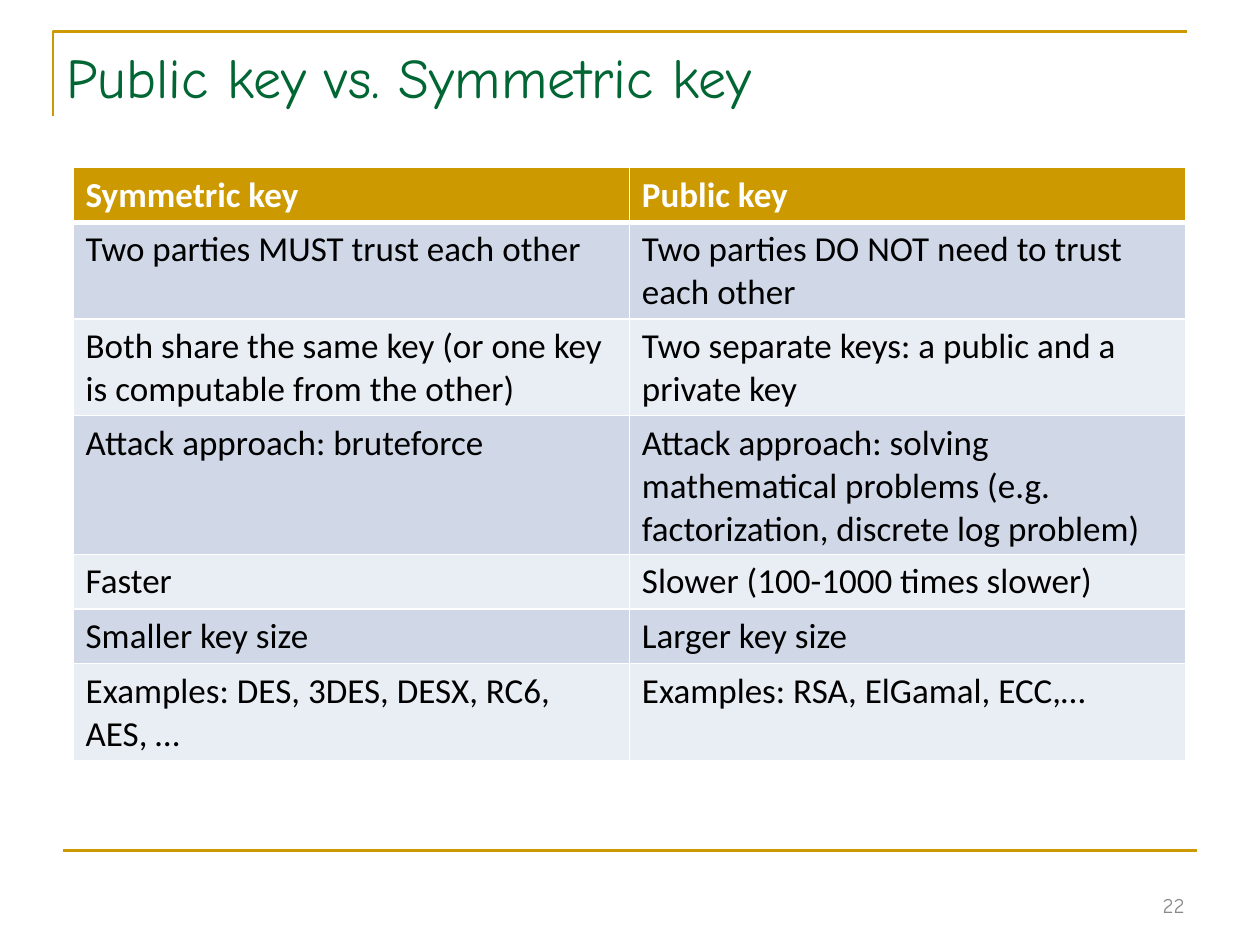
from lxml.etree import SubElement
from pptx import Presentation
from pptx.dml.color import RGBColor
from pptx.enum.text import MSO_ANCHOR, PP_ALIGN
from pptx.oxml.ns import qn
from pptx.util import Inches, Pt

GOLD = RGBColor(0xCC, 0x99, 0x00)
GREEN = RGBColor(0x00, 0x66, 0x33)
GREY = RGBColor(0x89, 0x89, 0x89)
WHITE = RGBColor(0xFF, 0xFF, 0xFF)
BLACK = RGBColor(0x00, 0x00, 0x00)
BANDS = (RGBColor(0xE9, 0xED, 0xF4), RGBColor(0xD0, 0xD8, 0xE8))

ROWS = (
    ("Symmetric key", "Public key"),
    ("Two parties MUST trust each other",
     "Two parties DO NOT need to trust each other"),
    ("Both share the same key (or one key is computable from the other)",
     "Two separate keys: a public and a private key"),
    ("Attack approach: bruteforce",
     "Attack approach: solving mathematical problems "
     "(e.g. factorization, discrete log problem)"),
    ("Faster", "Slower (100-1000 times slower)"),
    ("Smaller key size", "Larger key size"),
    ("Examples: DES, 3DES, DESX, RC6, AES, …", "Examples: RSA, ElGamal, ECC,…"),
)


def write(tf, text, size, color, font="Comic Neue", bold=False,
          align=PP_ALIGN.LEFT):
    """Put one formatted run of text into a text frame."""
    tf.word_wrap = True
    p = tf.paragraphs[0]
    p.alignment = align
    r = p.add_run()
    r.text = text
    r.font.size = Pt(size)
    r.font.name = font
    r.font.bold = bold
    r.font.color.rgb = color


def add_text(s, box, text, anchor=MSO_ANCHOR.TOP, **fmt):
    """Add a text box at the given left, top, width and height."""
    tf = s.shapes.add_textbox(*map(Inches, box)).text_frame
    tf.vertical_anchor = anchor
    write(tf, text, **fmt)


def add_corner(s, left, top, right, bottom):
    """Draw the open corner that frames the title."""
    fb = s.shapes.build_freeform(Inches(left), Inches(bottom))
    fb.add_line_segments([(Inches(left), Inches(top)),
                          (Inches(right), Inches(top))], close=False)
    sp = fb.convert_to_shape()
    sp.shadow.inherit = False
    sp.fill.background()
    sp.line.color.rgb = GOLD
    sp.line.width = Pt(1.5)


def add_rule(s, left, right, y):
    """Draw a horizontal rule."""
    line = s.shapes.add_connector(1, *map(Inches, (left, y, right, y)))
    line.line.color.rgb = GOLD
    line.line.width = Pt(1.5)
    SubElement(line._element.spPr, qn("a:effectLst"))


def set_borders(cell, widths):
    """Give a cell white borders, with widths in points keyed by side."""
    tc_pr = cell._tc.get_or_add_tcPr()
    for i, (side, width) in enumerate(widths.items()):
        ln = tc_pr.makeelement(qn(f"a:ln{side}"), {"w": str(Pt(width))})
        fill = SubElement(ln, qn("a:solidFill"))
        SubElement(fill, qn("a:srgbClr"), val=str(WHITE))
        tc_pr.insert(i, ln)


def add_comparison(s, left, top, width, row_height):
    """Add the banded table with a bold gold header."""
    n_rows, n_cols = len(ROWS), len(ROWS[0])
    table = s.shapes.add_table(
        n_rows, n_cols, Inches(left), Inches(top), Inches(width),
        Inches(row_height * n_rows)).table
    for i, texts in enumerate(ROWS):
        header = i == 0
        for j, text in enumerate(texts):
            cell = table.cell(i, j)
            cell.fill.solid()
            cell.fill.fore_color.rgb = GOLD if header else BANDS[i % 2]
            set_borders(cell, {"L": 1, "R": 1, "T": 3 if i == 1 else 1,
                               "B": 3 if header else 1})
            write(cell.text_frame, text, 20, WHITE if header else BLACK,
                  font="Calibri", bold=header)


def main():
    """Build the slide and save it."""
    prs = Presentation()
    prs.slide_width, prs.slide_height = Inches(10), Inches(7.5)
    s = prs.slides.add_slide(prs.slide_layouts[6])
    add_corner(s, 0.42, 0.25, 9.42, 0.92)
    add_rule(s, 0.5, 9.5, 6.75)
    add_text(s, (0.43, 0.29, 8.5, 0.75), "Public key vs. Symmetric key",
             size=32, color=GREEN)
    add_comparison(s, 0.58, 1.33, 8.83, 0.41)
    add_text(s, (7.17, 6.83, 2.33, 0.5), "22", anchor=MSO_ANCHOR.BOTTOM,
             size=12, color=GREY, align=PP_ALIGN.RIGHT)
    prs.save("out.pptx")


if __name__ == "__main__":
    main()
